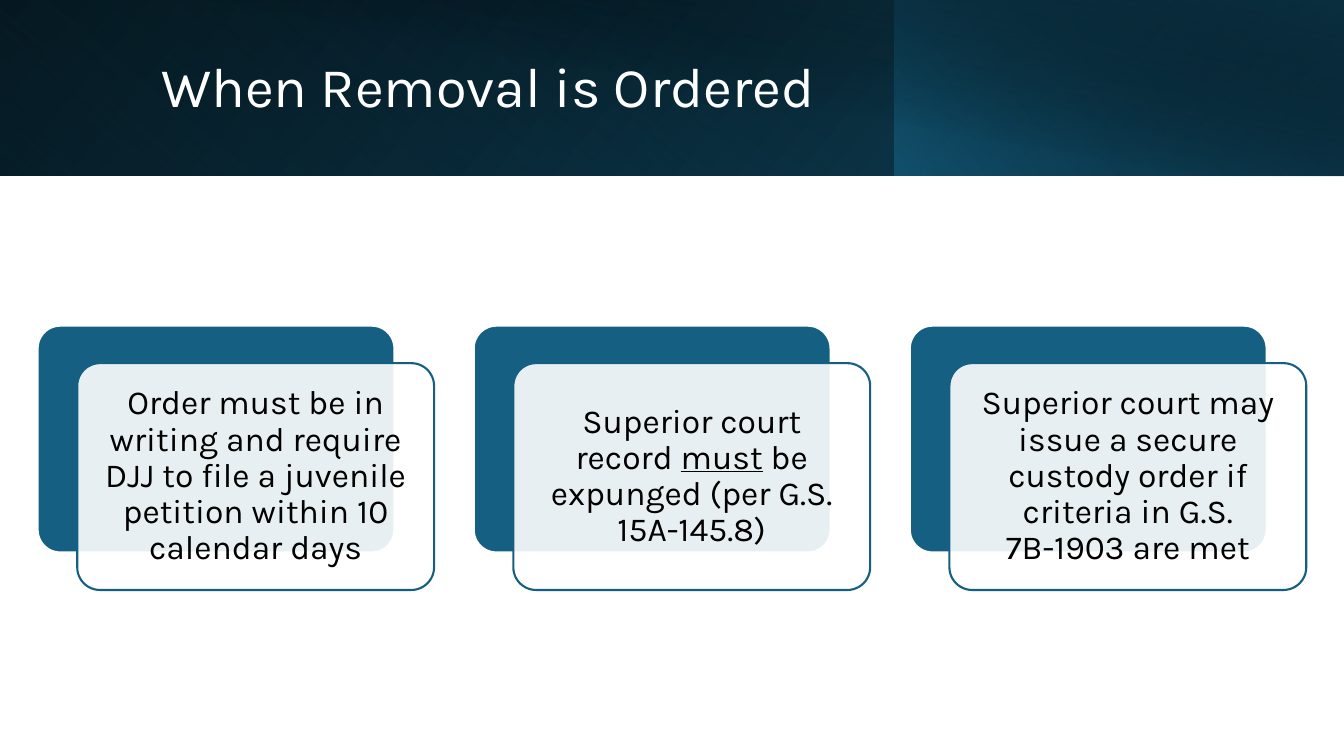
import dataclasses

import lxml.etree
import pptx
import pptx.dml.color
import pptx.enum.shapes
import pptx.enum.text
import pptx.oxml.ns
import pptx.util

Pt = pptx.util.Pt
SHAPES = pptx.enum.shapes.MSO_SHAPE
TEXT = pptx.enum.text


@dataclasses.dataclass(frozen=True)
class Theme:
    font: str = "Karla"
    title_size: int = 40
    card_size: int = 24
    white: str = "FFFFFF"
    black: str = "000000"
    teal: str = "156082"
    deep_teal: str = "104862"
    navy: str = "0B3041"


THEME = Theme()

# Header layers: left, width, height, rotation, flipped, angle, (position, colour, opacity)
HEADER_LAYERS = [
    (0, 960, 125.3, 0, True, 140, [(0, THEME.black, 100), (100, THEME.deep_teal, 100)]),
    (0, 639.2, 125.3, 180, True, 230, [(20, THEME.teal, 0), (100, THEME.navy, 55)]),
    (638.8, 321.2, 125.3, 0, True, 220, [(0, THEME.teal, 66), (100, THEME.black, 30)]),
    (36, 924, 126, 0, False, 280, [(50, THEME.black, 0), (99, THEME.navy, 52)]),
]

# Underscores enclose underlined words
CARD_TEXTS = [
    "Order must be in writing and require DJJ to file a juvenile petition within 10 calendar days",
    "Superior court record _must_ be expunged (per G.S. 15A-145.8)",
    "Superior court may issue a secure custody order if criteria in G.S. 7B-1903 are met",
]
CARD_LEFT, CARD_TOP, CARD_PITCH = 26.9, 232.6, 311.5
CARD_WIDTH, CARD_HEIGHT = 254.9, 162
CARD_SHIFT_X, CARD_SHIFT_Y = 28.3, 26.8


def rgb(colour):
    return pptx.dml.color.RGBColor.from_string(colour)


def add_child(parent, tag, **attributes):
    return lxml.etree.SubElement(parent, pptx.oxml.ns.qn(tag), **attributes)


def add_colour(parent, colour, opacity):
    value = add_child(parent, "a:srgbClr", val=colour)
    add_child(value, "a:alpha", val=str(opacity * 1000))


def format_span(span, size, colour):
    span.font.name = THEME.font
    span.font.size = Pt(size)
    span.font.color.rgb = rgb(colour)


def add_header_layer(page, left, width, height, rotation, flipped, angle, stops):
    layer = page.shapes.add_shape(SHAPES.RECTANGLE, Pt(left), 0, Pt(width), Pt(height))
    layer.shadow.inherit = False
    layer.line.fill.background()
    layer.rotation = rotation
    properties = layer.element.spPr
    if flipped:
        properties.find(pptx.oxml.ns.qn("a:xfrm")).set("flipH", "1")

    # Gradient with transparent stops
    layer.fill.background()
    gradient = lxml.etree.Element(pptx.oxml.ns.qn("a:gradFill"), rotWithShape="1")
    stop_list = add_child(gradient, "a:gsLst")
    for position, colour, opacity in stops:
        stop = add_child(stop_list, "a:gs", pos=str(position * 1000))
        add_colour(stop, colour, opacity)
    add_child(gradient, "a:lin", ang=str(angle * 60000), scaled="0")
    properties.replace(properties.find(pptx.oxml.ns.qn("a:noFill")), gradient)


def set_title(page, text):
    title = page.shapes.title
    title.left, title.top, title.width, title.height = Pt(108), Pt(23), Pt(779), Pt(81.4)
    frame = title.text_frame
    frame.text = text
    frame.auto_size = TEXT.MSO_AUTO_SIZE.NONE
    frame.vertical_anchor = TEXT.MSO_ANCHOR.MIDDLE
    para = frame.paragraphs[0]
    para.alignment = TEXT.PP_ALIGN.LEFT
    para.line_spacing = 0.9
    format_span(para.runs[0], THEME.title_size, THEME.white)
    # Bring the title in front of the header layers
    title.element.getparent().append(title.element)


def add_panel(page, left, top, fill, line):
    panel = page.shapes.add_shape(
        SHAPES.ROUNDED_RECTANGLE, Pt(left), Pt(top), Pt(CARD_WIDTH), Pt(CARD_HEIGHT))
    panel.adjustments[0] = 0.1
    panel.shadow.inherit = False
    panel.fill.solid()
    panel.fill.fore_color.rgb = rgb(fill)
    panel.line.color.rgb = rgb(line)
    panel.line.width = Pt(1.5)
    return panel


def add_card(page, left, top, text):
    add_panel(page, left, top, THEME.teal, THEME.white)
    front = add_panel(page, left + CARD_SHIFT_X, top + CARD_SHIFT_Y, THEME.white, THEME.teal)
    solid = front.element.spPr.find(pptx.oxml.ns.qn("a:solidFill"))
    add_child(solid[0], "a:alpha", val="90000")

    frame = front.text_frame
    frame.word_wrap = True
    frame.vertical_anchor = TEXT.MSO_ANCHOR.MIDDLE
    frame.margin_left = frame.margin_right = Pt(7.2)
    frame.margin_top = frame.margin_bottom = Pt(7.2)
    para = frame.paragraphs[0]
    para.alignment = TEXT.PP_ALIGN.CENTER
    para.line_spacing = 0.9
    for index, part in enumerate(text.split("_")):
        span = para.add_run()
        span.text = part
        format_span(span, THEME.card_size, THEME.black)
        span.font.underline = index % 2 == 1


def main():
    deck = pptx.Presentation()
    deck.slide_width, deck.slide_height = Pt(960), Pt(540)
    page = deck.slides.add_slide(deck.slide_layouts.get_by_name("Title Only"))

    # Header band and title
    for layer in HEADER_LAYERS:
        add_header_layer(page, *layer)
    set_title(page, "When Removal is Ordered")

    # Row of cards
    for index, text in enumerate(CARD_TEXTS):
        add_card(page, CARD_LEFT + index * CARD_PITCH, CARD_TOP, text)

    deck.save("out.pptx")


if __name__ == "__main__":
    main()
